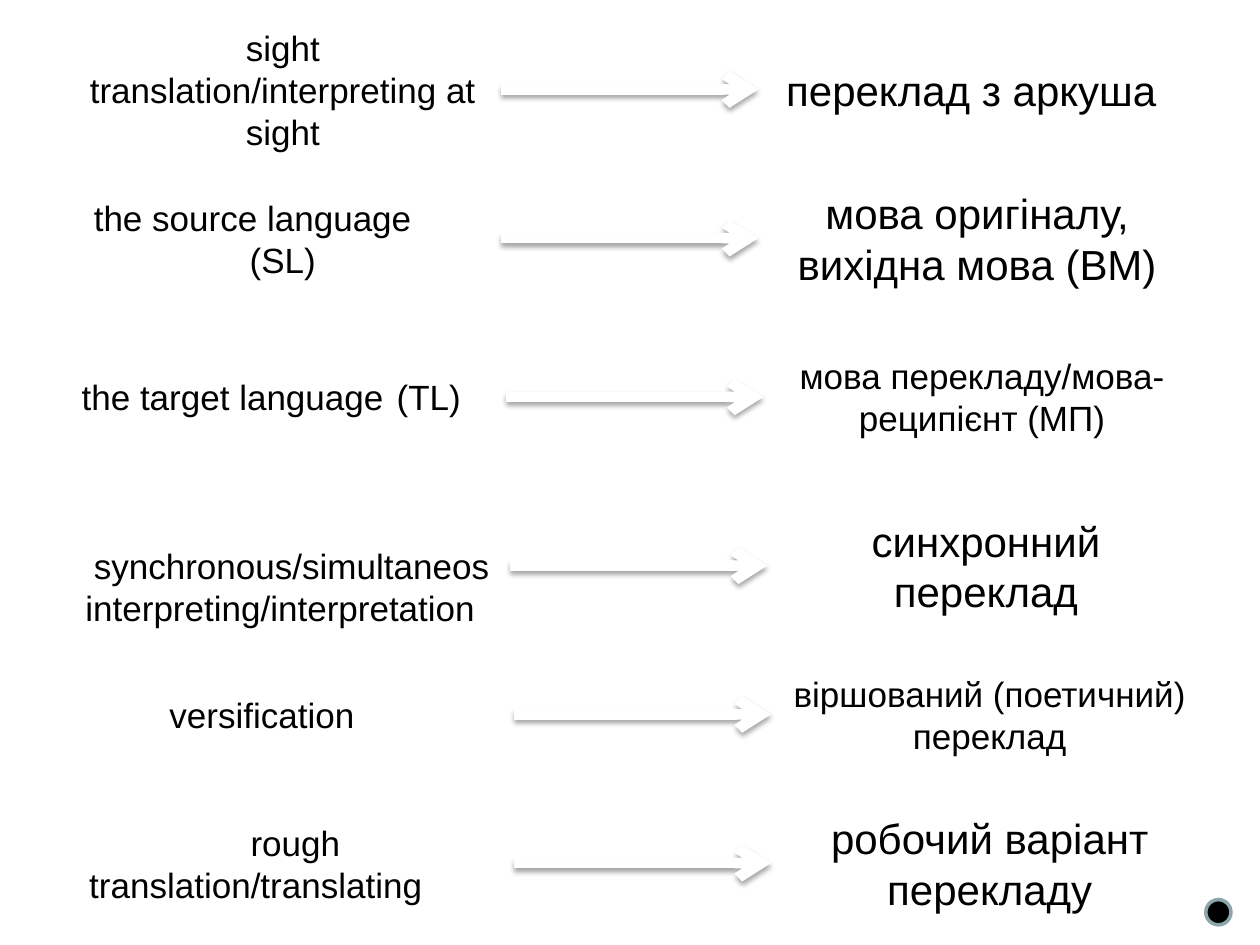
import lxml.etree
import pptx
import pptx.dml.color
import pptx.enum.shapes
import pptx.enum.text
import pptx.oxml.ns
import pptx.util
from pptx.util import Inches

BOX_WIDTH, BOX_HEIGHT = 3.47, 1
COLUMN_STEP = 5.51

# left, top, English term, Ukrainian term, Ukrainian text size
ROWS = [
    (0.51, 0.21, "sight translation/interpreting at sight", "переклад з аркуша ", 24),
    (0.51, 1.39, "the source language\t(SL)", "мова оригіналу, вихідна мова (ВМ)", 24),
    (0.55, 2.65, "the target language\t(TL)\t", "мова перекладу/мова-реципієнт (МП)", 20),
    (0.58, 3.99, "synchronous/simultaneos interpreting/interpretation\t",
     "синхронний переклад", 24),
    (0.61, 5.17, "versification\t\t", "віршований (поетичний) переклад", 20),
    (0.61, 6.35, "rough translation/translating\t\t", "робочий варіант перекладу", 24),
]
LOWERED_ROW = 3


def color(hex_value):
    return pptx.dml.color.RGBColor.from_string(hex_value)


def add_shape(s, kind, left, top, width, height, fill, line):
    sp = s.shapes.add_shape(kind, Inches(left), Inches(top), Inches(width), Inches(height))
    sp.shadow.inherit = False
    sp.fill.solid()
    sp.fill.fore_color.rgb = color(fill)
    sp.line.color.rgb = color(line)
    sp.line.width = pptx.util.Pt(2)
    return sp


def set_text(sp, text, size=20, font="Arial", font_color="000000", margin_top=0.05):
    tf = sp.text_frame
    tf.word_wrap = True
    tf.margin_top = Inches(margin_top)
    tf.vertical_anchor = pptx.enum.text.MSO_ANCHOR.MIDDLE
    p = tf.paragraphs[0]
    p.alignment = pptx.enum.text.PP_ALIGN.CENTER
    r = p.add_run()
    r.text = text
    r.font.size = pptx.util.Pt(size)
    r.font.name = font
    r.font.color.rgb = color(font_color)


def add_term(s, left, top, text, **text_format):
    sp = add_shape(s, pptx.enum.shapes.MSO_SHAPE.RECTANGLE, left, top,
                   BOX_WIDTH, BOX_HEIGHT, "FFFFFF", "FFFFFF")
    set_text(sp, text, **text_format)
    return sp


def add_child(parent, tag, **attributes):
    return lxml.etree.SubElement(parent, pptx.oxml.ns.qn(tag), attributes)


def add_arrow(s, source, target):
    """Join two boxes with a white arrow that stands out by its soft shadow."""
    arrow = s.shapes.add_connector(pptx.enum.shapes.MSO_CONNECTOR.STRAIGHT, 0, 0, 0, 0)
    arrow.begin_connect(source, 3)
    arrow.end_connect(target, 1)
    arrow.line.color.rgb = color("FFFFFF")
    arrow.line.width = pptx.util.Pt(6)
    add_child(arrow.line._get_or_add_ln(), "a:tailEnd", type="arrow")
    effects = add_child(arrow._element.spPr, "a:effectLst")
    shadow = add_child(effects, "a:outerShdw", blurRad=str(pptx.util.Pt(3.1)),
                       dist=str(pptx.util.Pt(1.8)), dir="5400000", rotWithShape="0")
    add_child(add_child(shadow, "a:srgbClr", val="000000"), "a:alpha", val="35000")


def main():
    prs = pptx.Presentation()
    prs.slide_width, prs.slide_height = Inches(10), Inches(7.5)
    s = prs.slides.add_slide(prs.slide_layouts[6])
    for index, (left, top, english, ukrainian, size) in enumerate(ROWS):
        margin_top = 0.38 if index == LOWERED_ROW else 0.05
        source = add_term(s, left, top, english, margin_top=margin_top)
        target = add_term(s, left + COLUMN_STEP, top, ukrainian, size=size)
        add_arrow(s, source, target)
    add_shape(s, pptx.enum.shapes.MSO_SHAPE.OVAL, 9.57, 7.14, 0.2, 0.2, "000000", "8AA6A8")
    prs.save("out.pptx")


if __name__ == "__main__":
    main()
